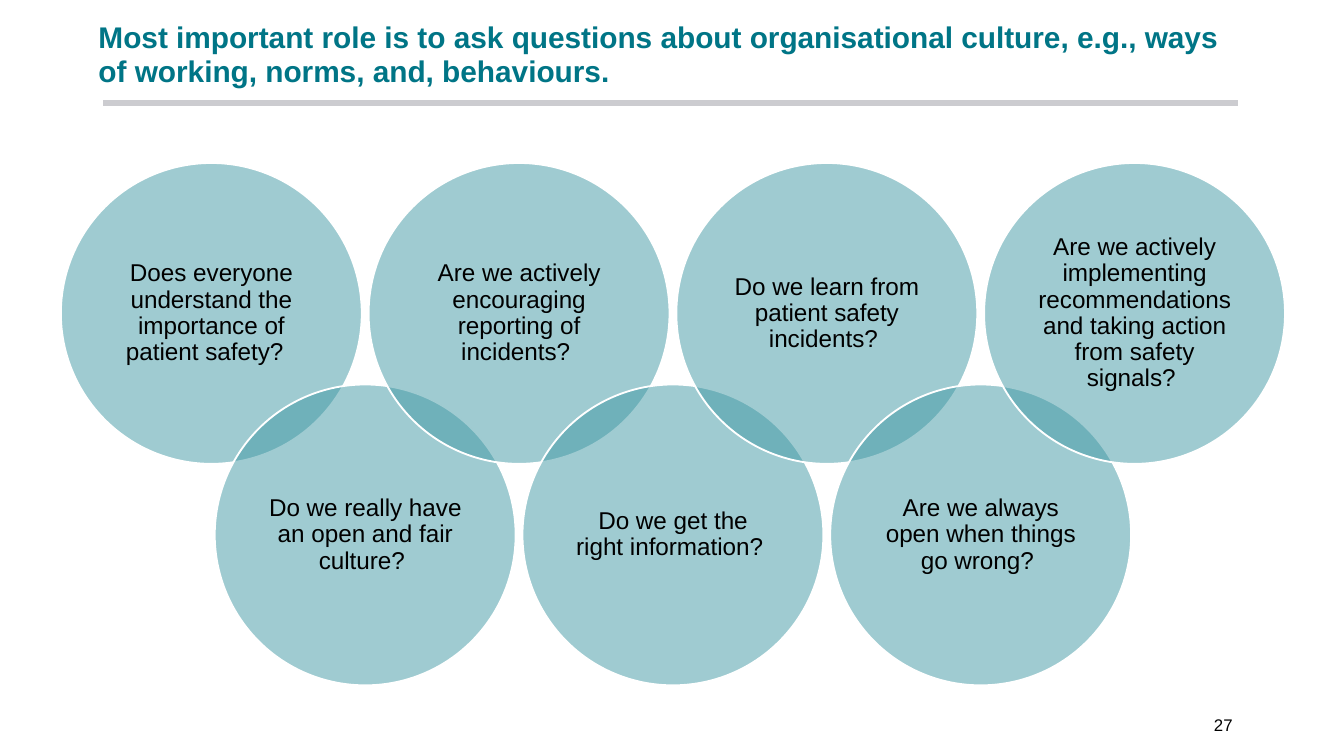
"""Build a slide of overlapping question circles on organisational culture."""
import pptx
import pptx.dml.color
import pptx.enum.shapes
import pptx.enum.text
import pptx.oxml.ns
import pptx.oxml.xmlchemy
import pptx.util

Pt = pptx.util.Pt
ALIGN = pptx.enum.text.PP_ALIGN
ANCHOR = pptx.enum.text.MSO_ANCHOR

COLOURS = {
    "title": "007586",
    "rule": "CCCCD0",
    "circle": "4098A4",
    "outline": "FFFFFF",
    "text": "000000",
}
FONT = "Arial"
TITLE = (
    "Most important role is to ask questions about organisational culture, "
    "e.g., ways of working, norms, and, behaviours."
)
QUESTIONS = [
    "Does everyone understand the importance of patient safety?  ",
    "Do we really have an open and fair culture? ",
    "Are we actively encouraging reporting of incidents? ",
    "Do we get the right information? ",
    "Do we learn from patient safety incidents? ",
    "Are we always open when things go wrong? ",
    "Are we actively implementing recommendations and taking action from safety signals? ",
]
DIAMETER = 161.2
FIRST_LEFT = 32.6
STEP = 82.43
ROW_TOPS = (87.3, 206)


def colour(name):
    return pptx.dml.color.RGBColor.from_string(COLOURS[name])


def append_element(parent, tag, **attributes):
    element = pptx.oxml.xmlchemy.OxmlElement(tag)
    for name, value in attributes.items():
        element.set(name, value)
    parent.append(element)


def write_text(shape, text, size, ink, align, anchor, inset, spacing=1.0, bold=False):
    frame = shape.text_frame
    frame.word_wrap = True
    frame.vertical_anchor = anchor
    frame.margin_left = frame.margin_right = Pt(inset)
    frame.margin_top = frame.margin_bottom = Pt(inset)
    paragraph = frame.paragraphs[0]
    paragraph.alignment = align
    paragraph.line_spacing = spacing
    run = paragraph.add_run()
    run.text = text
    run.font.name = FONT
    run.font.size = Pt(size)
    run.font.bold = bold
    run.font.color.rgb = colour(ink)


def add_rule(slide, left, right, y):
    rule = slide.shapes.add_connector(
        pptx.enum.shapes.MSO_CONNECTOR.STRAIGHT, Pt(left), Pt(y), Pt(right), Pt(y)
    )
    rule.line.color.rgb = colour("rule")
    rule.line.width = Pt(3)
    append_element(rule._element.spPr, "a:effectLst")


def add_label(slide, box, text, **style):
    shape = slide.shapes.add_textbox(*(Pt(length) for length in box))
    write_text(shape, text, inset=2.9, **style)


def add_question(slide, left, top, text):
    circle = slide.shapes.add_shape(
        pptx.enum.shapes.MSO_SHAPE.OVAL, Pt(left), Pt(top), Pt(DIAMETER), Pt(DIAMETER)
    )
    circle.shadow.inherit = False
    circle.fill.solid()
    circle.fill.fore_color.rgb = colour("circle")
    fill_colour = circle._element.spPr.find(".//" + pptx.oxml.ns.qn("a:srgbClr"))
    append_element(fill_colour, "a:alpha", val="50000")
    circle.line.color.rgb = colour("outline")
    circle.line.width = Pt(1)
    write_text(circle, text, 13, "text", ALIGN.CENTER, ANCHOR.MIDDLE, 3.6, spacing=0.9)


def main():
    presentation = pptx.Presentation()
    presentation.slide_width = Pt(720)
    presentation.slide_height = Pt(405)
    slide = presentation.slides.add_slide(presentation.slide_layouts[6])

    add_rule(slide, 55.2, 663.2, 55.2)
    add_label(slide, (49.9, 8.6, 609, 64.8), TITLE, size=16, ink="title",
              align=ALIGN.LEFT, anchor=ANCHOR.TOP, spacing=0.95, bold=True)
    for index, question in enumerate(QUESTIONS):
        add_question(slide, FIRST_LEFT + index * STEP, ROW_TOPS[index % 2], question)
    add_label(slide, (578.2, 380.9, 85, 14.4), "27", size=9, ink="text",
              align=ALIGN.RIGHT, anchor=ANCHOR.MIDDLE)

    presentation.save("out.pptx")


if __name__ == "__main__":
    main()
